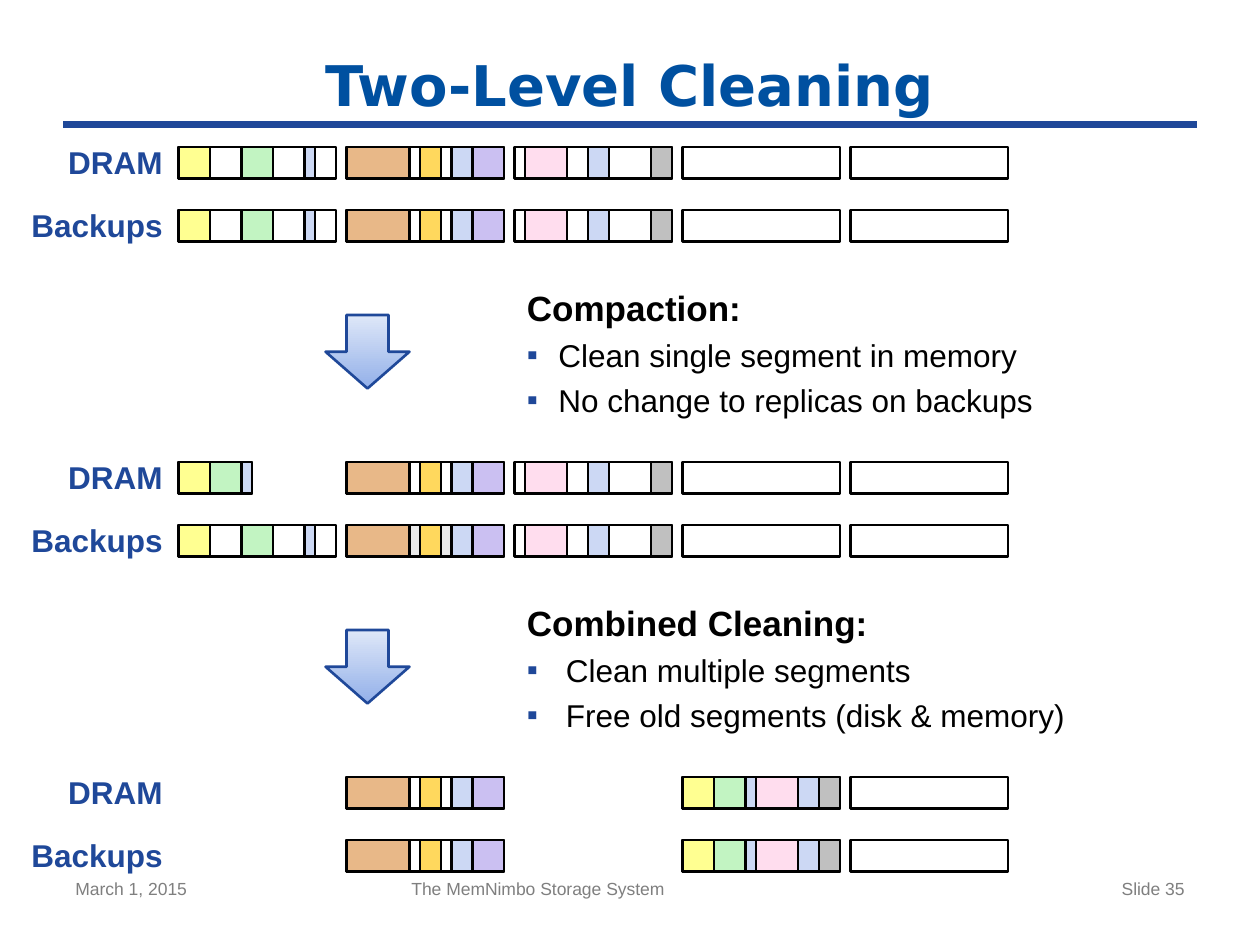
from lxml.etree import SubElement
from pptx import Presentation
from pptx.dml.color import RGBColor
from pptx.enum.shapes import MSO_CONNECTOR, MSO_SHAPE
from pptx.enum.text import MSO_ANCHOR, PP_ALIGN
from pptx.oxml.ns import qn
from pptx.util import Inches, Pt

COLUMNS, ROWS = 120, 90
SEGMENT_LEFT, SEGMENT_WIDTH, SEGMENT_PITCH, SEGMENT_HEIGHT = 17, 15, 16, 3
NAVY, BLACK, WHITE, DEAD, FOOTER_GRAY = "1F4899", "000000", "FFFFFF", "EAEAEA", "7F7F7F"
YELLOW, GREEN, BLUE, PINK = "FFFF91", "C2F4C2", "CCD8F4", "FFDDEE"
TAN, GOLD, PURPLE, GRAY = "E8B888", "FFD85D", "CBC0F2", "C0C0C0"

FIRST = (WHITE, 15, [(0, 3, YELLOW), (6, 3, GREEN), (12, 1, BLUE)])
COMPACTED = (DEAD, 7, [(0, 3, YELLOW), (3, 3, GREEN), (6, 1, BLUE)])
SECOND_OBJECTS = [(0, 6, TAN), (7, 2, GOLD), (10, 2, BLUE), (12, 3, PURPLE)]
SECOND = (WHITE, 15, SECOND_OBJECTS)
SECOND_SHADED = (DEAD, 15, SECOND_OBJECTS)
THIRD = (WHITE, 15, [(1, 4, PINK), (7, 2, BLUE), (13, 2, GRAY)])
COMBINED = (DEAD, 15, COMPACTED[2] + [(7, 4, PINK), (11, 2, BLUE), (13, 2, GRAY)])
FREE = (WHITE, 15, [])

STAGES = [
    (14, [FIRST, SECOND, THIRD, FREE, FREE], [FIRST, SECOND, THIRD, FREE, FREE]),
    (44, [COMPACTED, SECOND, THIRD, FREE, FREE], [FIRST, SECOND_SHADED, THIRD, FREE, FREE]),
    (74, [None, SECOND, None, COMBINED, FREE], [None, SECOND, None, COMBINED, FREE]),
]
STEPS = [
    (30, 66, 0.25, "Compaction:",
     ["Clean single segment in memory", "No change to replicas on backups"]),
    (60, 68, 0.31, "Combined Cleaning:",
     ["Clean multiple segments", "Free old segments (disk & memory)"]),
]
FOOTERS = [
    (6, 28, "March 1, 2015", PP_ALIGN.LEFT),
    (38, 45, "The MemNimbo Storage System", PP_ALIGN.LEFT),
    (86, 28, "Slide 35", PP_ALIGN.RIGHT),
]


def color(hex_text):
    """Turn a hex string into a colour."""
    return RGBColor.from_string(hex_text)


def grid(*cells):
    """Turn columns and rows of the slide grid into lengths."""
    return [Inches(cell * 10 / COLUMNS) for cell in cells]


def write(paragraph, text, size=18, font="Arial", ink=BLACK, bold=False,
          align=PP_ALIGN.LEFT, before=0):
    """Put formatted text into a paragraph."""
    paragraph.alignment = align
    paragraph.space_before = Pt(before)
    run = paragraph.add_run()
    run.text = text
    run.font.size = Pt(size)
    run.font.name = font
    run.font.bold = bold
    run.font.color.rgb = color(ink)


def add_frame(slide, place, wrap=True, inset=True, anchor=MSO_ANCHOR.TOP):
    """Add an empty text box and return its text frame."""
    frame = slide.shapes.add_textbox(*grid(*place)).text_frame
    frame.word_wrap = wrap
    frame.vertical_anchor = anchor
    if not inset:
        frame.margin_left = frame.margin_right = 0
        frame.margin_top = frame.margin_bottom = 0
    return frame


def add_bullet(paragraph, indent):
    """Give a paragraph a square bullet with a hanging indent."""
    properties = paragraph._p.get_or_add_pPr()
    properties.set("marL", str(Inches(indent)))
    properties.set("indent", str(-Inches(indent)))
    bullet_color = SubElement(properties, qn("a:buClr"))
    SubElement(bullet_color, qn("a:srgbClr"), val=NAVY)
    SubElement(properties, qn("a:buFont"), typeface="Arial")
    SubElement(properties, qn("a:buChar"), char="▪")


def add_outlined(slide, preset, place, outline):
    """Add a preset shape with a thin outline and no shadow."""
    shape = slide.shapes.add_shape(preset, *grid(*place))
    shape.shadow.inherit = False
    shape.line.color.rgb = color(outline)
    shape.line.width = Pt(1.5)
    return shape


def add_block(slide, left, top, width, fill):
    """Add one filled block of memory."""
    place = (left, top, width, SEGMENT_HEIGHT)
    block = add_outlined(slide, MSO_SHAPE.RECTANGLE, place, BLACK)
    block.fill.solid()
    block.fill.fore_color.rgb = color(fill)


def add_storage_row(slide, top, label, label_width, segments):
    """Add a labelled row of segments with their live objects."""
    frame = add_frame(slide, (15.5 - label_width, top - 0.35, label_width, 3.6),
                      wrap=False, inset=False)
    write(frame.paragraphs[0], label, ink=NAVY, bold=True, align=PP_ALIGN.RIGHT)
    for index, segment in enumerate(segments):
        if segment is None:
            continue
        left = SEGMENT_LEFT + index * SEGMENT_PITCH
        background, width, live_objects = segment
        add_block(slide, left, top, width, background)
        for offset, length, fill in live_objects:
            add_block(slide, left + offset, top, length, fill)


def add_step(slide, top, width, indent, heading, points):
    """Add a down arrow and the explanation of a cleaning step."""
    arrow = add_outlined(slide, MSO_SHAPE.DOWN_ARROW, (31, top, 8, 7), NAVY)
    arrow.fill.gradient()
    arrow.fill.gradient_angle = 270
    for stop, shade in zip(arrow.fill.gradient_stops, ("DEE7F8", "93B0E9")):
        stop.color.rgb = color(shade)
    frame = add_frame(slide, (49, top - 3.33, width, 15))
    write(frame.paragraphs[0], heading, size=20, bold=True)
    for point in points:
        paragraph = frame.add_paragraph()
        write(paragraph, point, before=4.2)
        add_bullet(paragraph, indent)


def add_heading(slide):
    """Add the title and the rule below it."""
    rule = slide.shapes.add_connector(MSO_CONNECTOR.STRAIGHT, *grid(6, 11.9, 114, 11.9))
    rule.line.color.rgb = color(NAVY)
    rule.line.width = Pt(4)
    SubElement(rule._element.spPr, qn("a:effectLst"))
    frame = add_frame(slide, (6, 4, 108, 8), anchor=MSO_ANCHOR.MIDDLE)
    write(frame.paragraphs[0], "Two-Level Cleaning", size=32, font="DejaVu Sans",
          ink="0050A0", bold=True, align=PP_ALIGN.CENTER)


def main():
    """Build the slide and save it."""
    deck = Presentation()
    deck.slide_width, deck.slide_height = grid(COLUMNS, ROWS)
    slide = deck.slides.add_slide(deck.slide_layouts[6])
    add_heading(slide)
    for top, memory, backups in STAGES:
        add_storage_row(slide, top, "DRAM", 9.1, memory)
        add_storage_row(slide, top + 6, "Backups", 12.6, backups)
    for step in STEPS:
        add_step(slide, *step)
    for left, width, text, align in FOOTERS:
        frame = add_frame(slide, (left, 83, width, 5.2))
        write(frame.paragraphs[0], text, size=10, ink=FOOTER_GRAY, align=align)
    deck.save("out.pptx")


if __name__ == "__main__":
    main()
